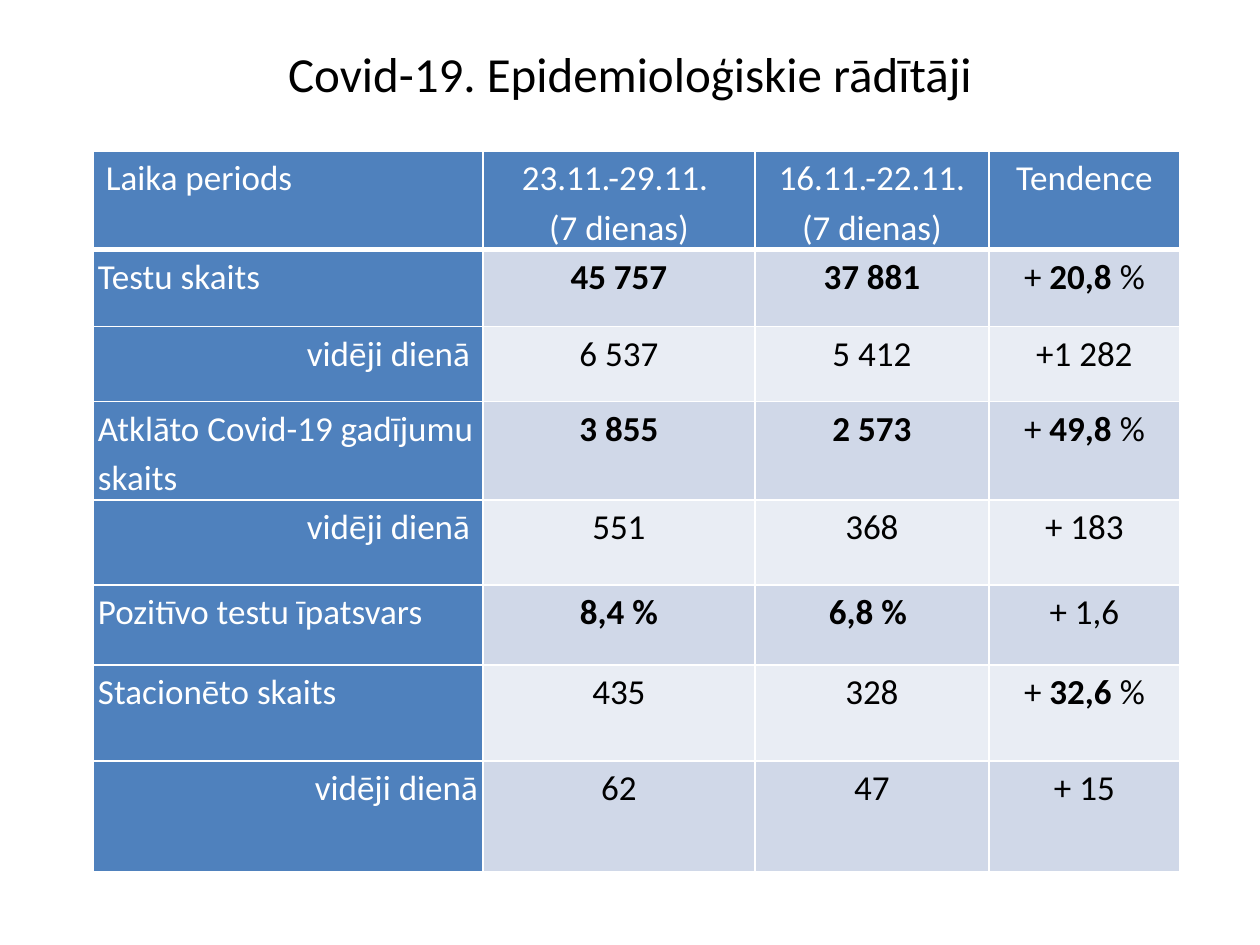
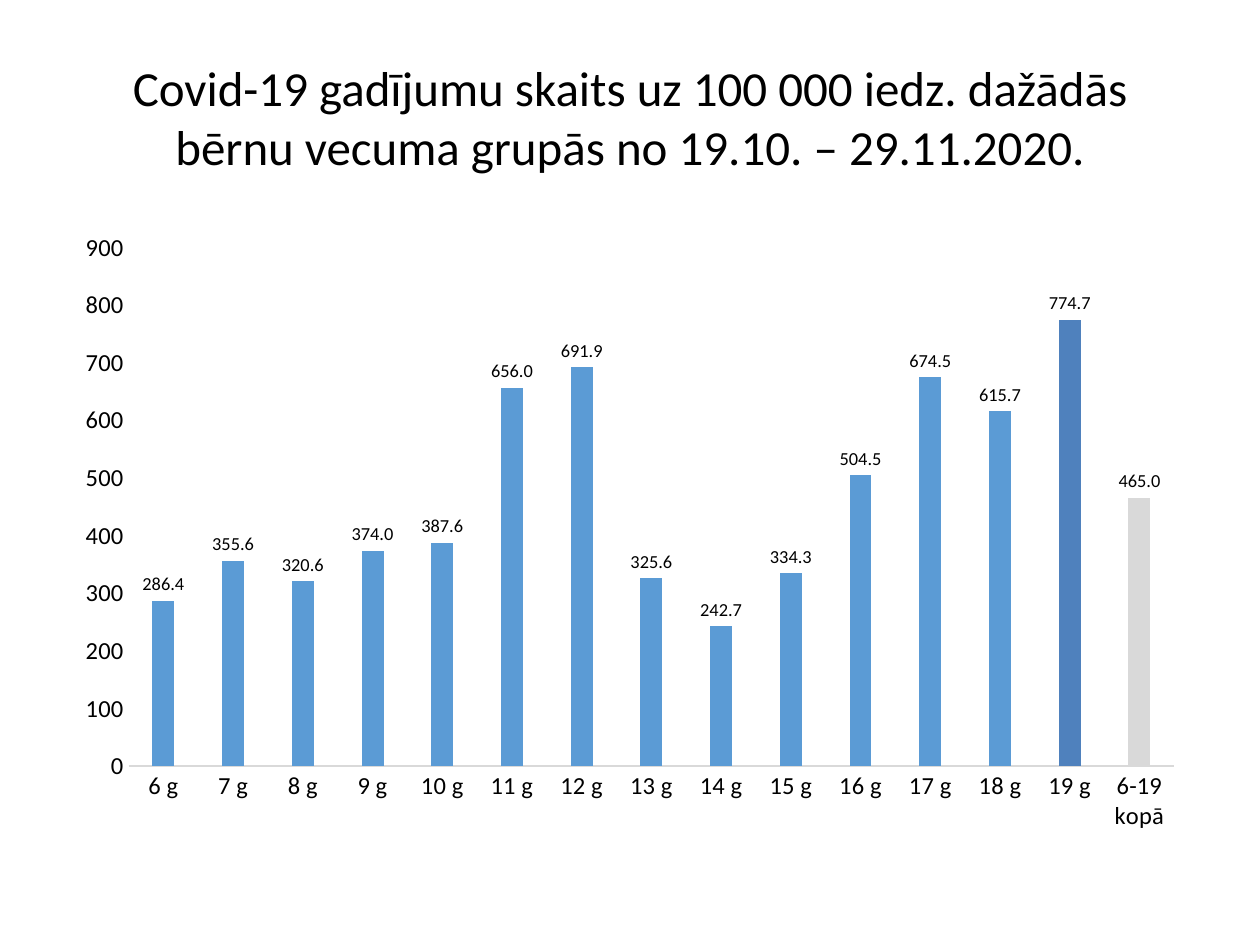
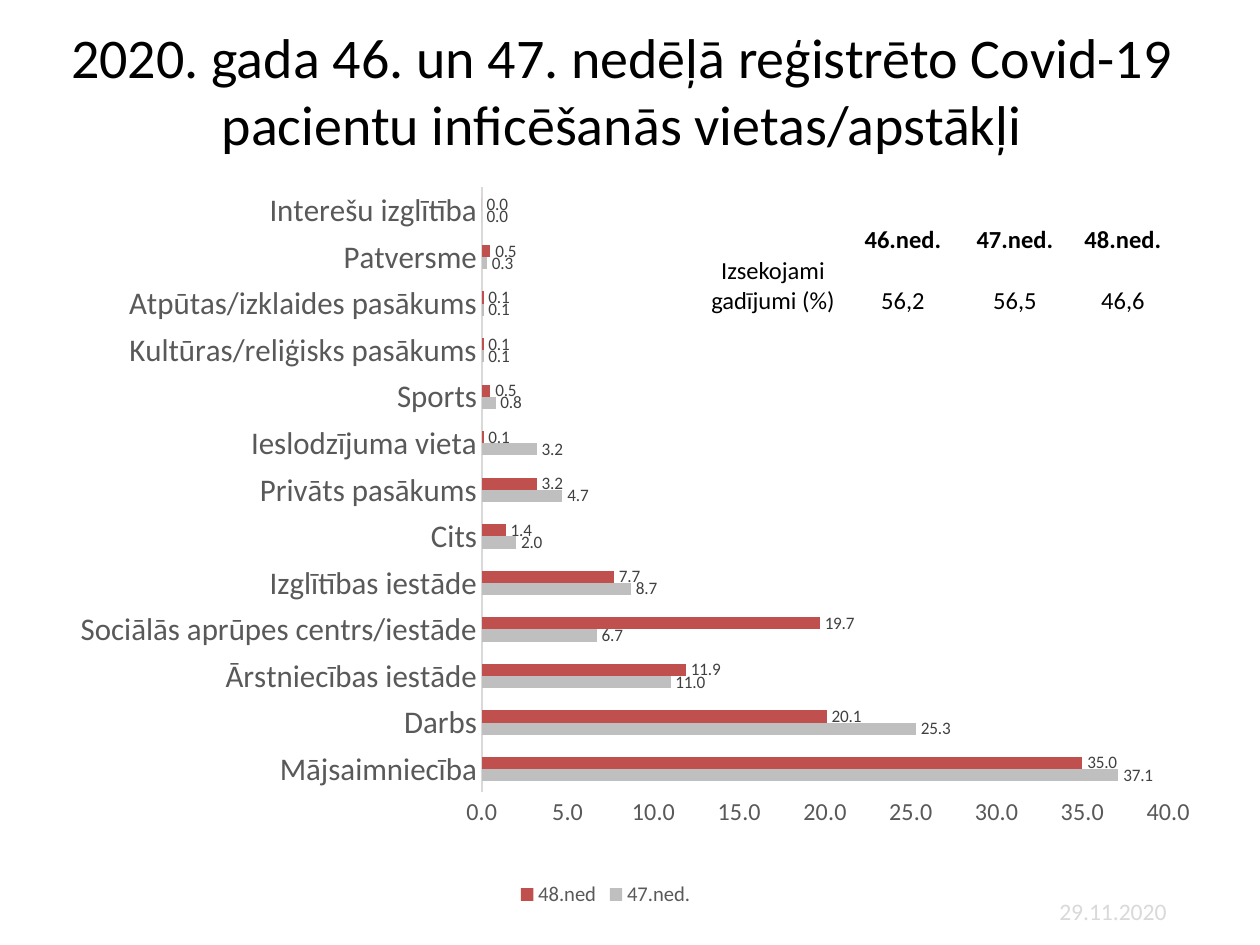
from dataclasses import dataclass

from lxml import etree
from pptx import Presentation
from pptx import util as u
from pptx.chart.data import CategoryChartData
from pptx.dml.color import RGBColor
from pptx.enum import chart as ch, text
from pptx.oxml.ns import qn


@dataclass(frozen=True)
class Theme:
    font: str = "Calibri"
    black: str = "000000"
    white: str = "FFFFFF"
    blue: str = "4F81BD"
    light_blue: str = "5B9BD5"
    band_dark: str = "D0D8E8"
    band_light: str = "E9EDF4"
    red: str = "C0504D"
    silver: str = "BFBFBF"
    pale: str = "D9D9D9"
    axis_grey: str = "595959"
    label_grey: str = "404040"
    title: float = 28
    title_large: float = 32
    table: float = 20
    category: float = 18
    body: float = 14
    date: float = 13.5
    legend: float = 12
    label: float = 10.5
    label_small: float = 10


T = Theme()
LEFT, CENTER, RIGHT = text.PP_ALIGN.LEFT, text.PP_ALIGN.CENTER, text.PP_ALIGN.RIGHT

INDICATORS = [
    (" Laika periods", "23.11.-29.11. \n(7 dienas)", "16.11.-22.11.\n(7 dienas)", "Tendence"),
    ("Testu skaits", "*45 757*", "*37 881*", "+ *20,8 *%"),
    ("vidēji dienā ", "6 537", "5 412", "+1 282"),
    ("Atklāto Covid-19 gadījumu skaits", "*3 855*", "*2 573*", "+* 49,8 *%"),
    ("vidēji dienā ", "551", "368", "+ 183"),
    ("Pozitīvo testu īpatsvars", "*8,4 %*", "*6,8 % *", "+ 1,6"),
    ("Stacionēto skaits", "435", "328", "+ *32,6 *%"),
    ("vidēji dienā", "62", "47", "+ 15"),
]
AGES = [f"{age} g" for age in range(6, 20)] + ["6-19 kopā"]
CASES_BY_AGE = [286.4, 355.6, 320.6, 374, 387.6, 656, 691.9, 325.6,
                242.7, 334.3, 504.5, 674.5, 615.7, 774.7, 465]
# place, week 47, week 48
INFECTION_PLACES = [
    ("Mājsaimniecība", 37.1, 35),
    ("Darbs", 25.3, 20.1),
    ("Ārstniecības iestāde", 11, 11.9),
    ("Sociālās aprūpes centrs/iestāde", 6.7, 19.7),
    ("Izglītības iestāde", 8.7, 7.7),
    ("Cits", 2, 1.4),
    ("Privāts pasākums", 4.7, 3.2),
    ("Ieslodzījuma vieta", 3.2, 0.1),
    ("Sports", 0.8, 0.5),
    ("Kultūras/reliģisks pasākums", 0.1, 0.1),
    ("Atpūtas/izklaides pasākums", 0.1, 0.1),
    ("Patversme", 0.3, 0.5),
    ("Interešu izglītība", 0, 0),
]
TRACEABLE = [
    ("", "*46.ned.*", "*47.ned.*", "*48.ned.*"),
    ("Izsekojami gadījumi (%)", "56,2", "56,5", "46,6"),
]


def px(n):
    return u.Emu(round(n * 914400 / 126))


def rgb(color):
    return RGBColor.from_string(color)


def style_font(font, size, color=T.black, bold=False):
    font.name, font.size, font.bold = T.font, u.Pt(size), bold
    font.color.rgb = rgb(color)


def write(tf, content, size=T.body, color=T.black, align=LEFT, spacing=None):
    """Write one paragraph per line; asterisks switch bold on and off."""
    for i, line in enumerate(content.split("\n")):
        p = tf.add_paragraph() if i else tf.paragraphs[0]
        p.alignment, p.line_spacing = align, spacing
        if not line:
            p._p.get_or_add_endParaRPr().set("sz", str(int(size * 100)))
        for k, part in enumerate(line.split("*")):
            if part:
                r = p.add_run()
                r.text = part
                style_font(r.font, size, color, bold=k % 2 == 1)


def add_titled_slide(prs, title, box, size=T.title):
    s = prs.slides.add_slide(prs.slide_layouts[5])
    sp = s.shapes.title
    sp.left, sp.top, sp.width, sp.height = map(px, box)
    sp.text_frame.vertical_anchor = text.MSO_ANCHOR.MIDDLE
    write(sp.text_frame, title, size=size, align=CENTER)
    return s


def set_borders(cell, bottom=1):
    tc_pr = cell._tc.get_or_add_tcPr()
    for i, (side, width) in enumerate(zip("LRTB", (1, 1, 1, bottom))):
        ln = etree.Element(qn(f"a:ln{side}"), w=str(u.Pt(width)))
        fill = etree.SubElement(ln, qn("a:solidFill"))
        etree.SubElement(fill, qn("a:srgbClr"), val=T.white)
        tc_pr.insert(i, ln)


def add_grid(s, box, widths, heights, rows, cell_style):
    """Add a table; cell_style(row, column, content) gives each cell's format."""
    table = s.shapes.add_table(len(rows), len(widths), *map(px, box)).table
    table.first_row = table.horz_banding = False
    for column, width in zip(table.columns, widths):
        column.width = px(width)
    for row, height in zip(table.rows, heights):
        row.height = px(height)
    for i, row in enumerate(rows):
        for j, content in enumerate(row):
            cell = table.cell(i, j)
            style = cell_style(i, j, content)
            cell.fill.solid()
            cell.fill.fore_color.rgb = rgb(style["fill"])
            cell.vertical_anchor = style["anchor"]
            (cell.margin_left, cell.margin_top,
             cell.margin_right, cell.margin_bottom) = map(px, style["insets"])
            set_borders(cell, style.get("bottom", 1))
            write(cell.text_frame, content, **style["text"])


def indicator_style(i, j, content):
    heading = i == 0 or j == 0
    band = T.band_dark if i % 2 else T.band_light
    align = CENTER if j else RIGHT if content.startswith("vidēji") else LEFT
    return dict(fill=T.blue if heading else band, anchor=text.MSO_ANCHOR.TOP,
                insets=(5, 0, 5, 0), bottom=1 if i else 3,
                text=dict(size=T.table, color=T.white if heading else T.black,
                          align=align, spacing=1.15))


def traceable_style(i, j, content):
    return dict(fill=T.white, anchor=text.MSO_ANCHOR.BOTTOM,
                insets=(1, 1, 1, 0), text=dict(align=CENTER))


def style_axis(axis, size, color):
    axis.has_major_gridlines = False
    axis.major_tick_mark = axis.minor_tick_mark = ch.XL_TICK_MARK.NONE
    style_font(axis.tick_labels.font, size, color)


def add_bars(s, box, kind, categories, series, gap, number_format,
             category_size=T.body, axis_color=T.black,
             label_size=T.label, label_color=T.black):
    """Add a clustered chart from (name, values, color) series."""
    data = CategoryChartData()
    data.categories = categories
    for name, values, _ in series:
        data.add_series(name, values)
    chart = s.shapes.add_chart(kind, *map(px, box), data).chart
    chart.has_title = chart.has_legend = False
    style_font(chart.font, T.label_small)

    style_axis(chart.category_axis, category_size, axis_color)
    line = chart.category_axis.format.line
    line.color.rgb, line.width = rgb(T.pale), u.Pt(0.75)
    style_axis(chart.value_axis, T.body, axis_color)
    chart.value_axis.format.line.fill.background()
    ticks = chart.value_axis.tick_labels
    ticks.number_format, ticks.number_format_is_linked = number_format, False

    plot = chart.plots[0]
    plot.gap_width, plot.vary_by_categories = gap, False
    for bars, (_, _, color) in zip(plot.series, series):
        bars.format.fill.solid()
        bars.format.fill.fore_color.rgb = rgb(color)
        bars.invert_if_negative = False
        labels = bars.data_labels
        labels.show_value = True
        labels.number_format, labels.number_format_is_linked = "0.0", False
        labels.position = ch.XL_LABEL_POSITION.OUTSIDE_END
        style_font(labels.font, label_size, label_color)
    return chart


def set_plot_area(chart, **fractions):
    area = chart._chartSpace.chart.plotArea
    for old in area.findall(qn("c:layout")):
        area.remove(old)
    layout = etree.Element(qn("c:layout"))
    manual = etree.SubElement(layout, qn("c:manualLayout"))
    values = dict(layoutTarget="inner", xMode="edge", yMode="edge", **fractions)
    for tag, value in values.items():
        etree.SubElement(manual, qn(f"c:{tag}"), val=str(value))
    area.insert(0, layout)


def add_date(s, box, date):
    tf = s.shapes.add_textbox(*map(px, box)).text_frame
    tf.word_wrap = True
    tf.auto_size = text.MSO_AUTO_SIZE.SHAPE_TO_FIT_TEXT
    write(tf, date, size=T.date, color=T.pale)


def indicators_slide(prs):
    s = add_titled_slide(prs, "Covid-19. Epidemioloģiskie rādītāji", (87, 20, 1086, 105))
    add_grid(s, (93, 151, 1087, 717), (390, 272, 234, 191),
             (92, 77, 75, 92, 85, 80, 96, 111), INDICATORS, indicator_style)


def age_groups_slide(prs):
    s = add_titled_slide(
        prs, "Covid-19 gadījumu skaits uz 100 000 iedz. dažādās bērnu vecuma "
        "grupās no 19.10. – 29.11.2020.", (63, 38, 1134, 157))
    chart = add_bars(s, (63, 220, 1134, 624), ch.XL_CHART_TYPE.COLUMN_CLUSTERED, AGES,
                     [("Series 1", CASES_BY_AGE, T.light_blue)], gap=219, number_format="0")
    plot = chart.plots[0]
    plot.overlap = -27
    for index, color in ((13, T.blue), (14, T.pale)):
        fill = plot.series[0].points[index].format.fill
        fill.solid()
        fill.fore_color.rgb = rgb(color)


def infection_places_slide(prs):
    s = add_titled_slide(
        prs, "2020. gada 46. un 47. nedēļā reģistrēto Covid-19 pacientu "
        "inficēšanās vietas/apstākļi", (55, 11, 1134, 157), size=T.title_large)
    places, week_47, week_48 = zip(*INFECTION_PLACES)
    chart = add_bars(s, (43, 165, 1147, 747), ch.XL_CHART_TYPE.BAR_CLUSTERED, places,
                     [("47.ned.", week_47, T.silver), ("48.ned", week_48, T.red)],
                     gap=182, number_format="0.0", category_size=T.category,
                     axis_color=T.axis_grey, label_size=T.label_small,
                     label_color=T.label_grey)
    set_plot_area(chart, x=0.4, y=0.03, w=0.61, h=0.81)
    chart.has_legend = True
    chart.legend.position = ch.XL_LEGEND_POSITION.BOTTOM
    chart.legend.include_in_layout = False
    style_font(chart.legend.font, T.legend, T.axis_grey)
    add_grid(s, (699, 224, 476, 91), (148, 112, 112, 104), (26, 26),
             TRACEABLE, traceable_style)
    add_date(s, (1047, 891, 164, 42), "29.11.2020")


def main():
    prs = Presentation()
    prs.slide_width, prs.slide_height = px(1260), px(945)
    indicators_slide(prs)
    age_groups_slide(prs)
    infection_places_slide(prs)
    prs.save("out.pptx")


if __name__ == "__main__":
    main()
